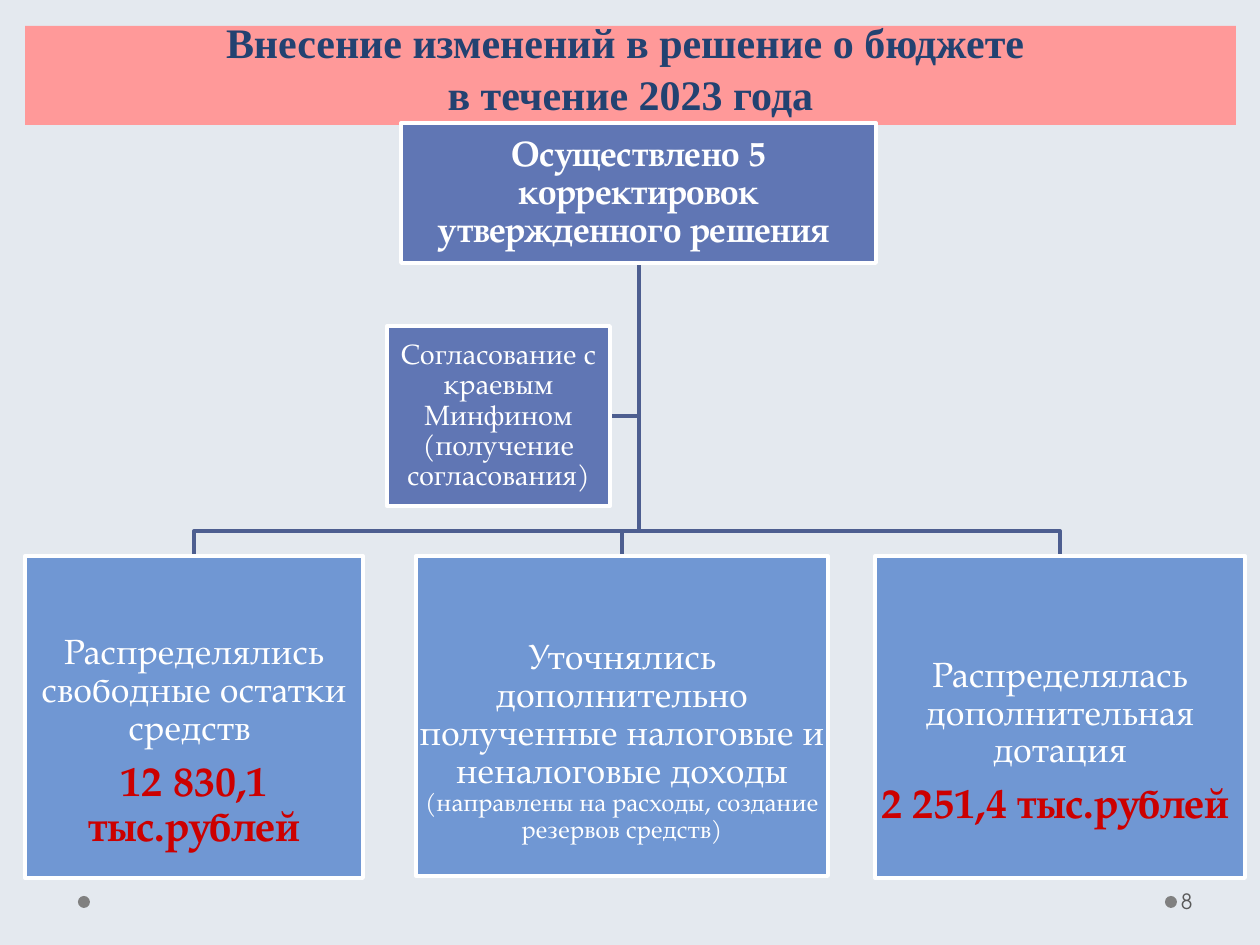
"""Build the slide on budget amendments made during 2023."""
from dataclasses import dataclass

from pptx import Presentation
from pptx import util as u
from pptx.dml.color import RGBColor
from pptx.enum import shapes, text

SCALE = 914400 / 126
COLOURS = {
    "ground": "E4E9EF", "banner": "FF9999", "title": "234271",
    "head": "6076B4", "branch": "7097D3", "link": "4D5E90",
    "white": "FFFFFF", "amount": "CC0000", "dot": "808080", "number": "595959",
}
SERIF, BODY, SANS = "Times New Roman", "TeX Gyre Pagella", "TeX Gyre Adventor"
MARGINS = ("margin_left", "margin_top", "margin_right", "margin_bottom")


@dataclass(frozen=True)
class Span:
    words: str
    size: int = 20
    bold: bool = False
    colour: str = "white"
    font: str = BODY


@dataclass(frozen=True)
class Node:
    left: int
    top: int
    width: int
    height: int
    fill: str
    paras: tuple[tuple[Span, ...], ...]
    drop: int = 1

    @property
    def centre(self) -> int:
        return self.left + self.width // 2

    @property
    def middle(self) -> int:
        return self.top + self.height // 2


ROOT = Node(401, 123, 475, 140, "head", (
    (Span("Осуществлено 5 корректировок утвержденного решения ", bold=True),),))
ASSISTANT = Node(387, 326, 223, 180, "head", (
    (Span("Согласование с краевым Минфином (получение согласования)", 16),),))
BRANCH_TOP, BUS, DROP = 556, 531, 52
BRANCHES = (
    Node(25, BRANCH_TOP, 338, 322, "branch", (
        (Span("Распределялись свободные остатки средств "),),
        (Span("12 830,1 тыс.рублей", 24, True, "amount"),)), DROP),
    Node(416, BRANCH_TOP, 412, 320, "branch", (
        (Span("Уточнялись дополнительно полученные налоговые и неналоговые доходы "),
         Span("(направлены на расходы, создание резервов средств)", 14)),), DROP),
    Node(875, BRANCH_TOP, 370, 322, "branch", (
        (Span("Распределялась дополнительная дотация"),),
        (Span("2 251,4 тыс.рублей ", 24, True, "amount"),)), DROP),
)


def px(length: int) -> u.Emu:
    """Turn pixels into EMU."""
    return u.Emu(round(length * SCALE))


def colour(name: str) -> RGBColor:
    """Look up a named colour."""
    return RGBColor.from_string(COLOURS[name])


def assign(target, values: dict) -> None:
    """Set each attribute given in a dict."""
    for name, value in values.items():
        setattr(target, name, value)


def style_run(run, span: Span) -> None:
    """Give a run the font of its span."""
    assign(run.font, {"name": span.font, "size": u.Pt(span.size), "bold": span.bold})
    run.font.color.rgb = colour(span.colour)


def style_frame(frame, anchor, margins: tuple[int, ...]) -> None:
    """Set wrapping, anchor and insets of a text frame."""
    assign(frame, {"word_wrap": True, "auto_size": text.MSO_AUTO_SIZE.NONE,
                   "vertical_anchor": anchor})
    assign(frame, dict(zip(MARGINS, map(px, margins))))


def add_title(page) -> None:
    """Place the title on its banner."""
    box = page.shapes.title
    assign(box, {"left": px(25), "top": px(26), "width": px(1211), "height": px(99)})
    box.fill.solid()
    box.fill.fore_color.rgb = colour("banner")
    style_frame(box.text_frame, text.MSO_ANCHOR.BOTTOM, (12, 6, 12, 6))
    para = box.text_frame.paragraphs[0]
    para.text = "Внесение изменений в решение о бюджете \vв течение 2023 года"
    assign(para, {"alignment": text.PP_ALIGN.CENTER, "line_spacing": 1.04})
    for run in para.runs:
        style_run(run, Span(run.text, 24, True, "title", SERIF))


def add_link(page, points: list[tuple[int, int]]) -> None:
    """Draw an elbow line through the points."""
    corners = [(px(x), px(y)) for x, y in points]
    builder = page.shapes.build_freeform(*corners[0], scale=1.0)
    link = builder.add_line_segments(corners[1:], close=False).convert_to_shape()
    link.shadow.inherit = False
    link.fill.background()
    link.line.color.rgb = colour("link")
    link.line.width = u.Pt(2.25)


def add_node(page, node: Node) -> None:
    """Draw a chart box with its text."""
    box = page.shapes.add_shape(
        shapes.MSO_SHAPE.RECTANGLE,
        *map(px, (node.left, node.top, node.width, node.height)))
    box.shadow.inherit = False
    box.fill.solid()
    box.fill.fore_color.rgb = colour(node.fill)
    box.line.color.rgb = colour("white")
    box.line.width = u.Pt(2.25)
    frame = box.text_frame
    style_frame(frame, text.MSO_ANCHOR.MIDDLE, (1, node.drop, 1, 1))
    for index, spans in enumerate(node.paras):
        para = frame.add_paragraph() if index else frame.paragraphs[0]
        assign(para, {"alignment": text.PP_ALIGN.CENTER, "line_spacing": 0.9,
                      "space_before": u.Pt(7 if index else 0)})
        for span in spans:
            run = para.add_run()
            run.text = span.words
            style_run(run, span)


def add_footer(page) -> None:
    """Draw the footer dots and the page number."""
    for left in (78, 1165):
        dot = page.shapes.add_shape(shapes.MSO_SHAPE.OVAL, *map(px, (left, 896, 12, 12)))
        dot.shadow.inherit = False
        dot.fill.solid()
        dot.fill.fore_color.rgb = colour("dot")
        dot.line.fill.background()
    box = page.shapes.add_textbox(*map(px, (1177, 876, 77, 50)))
    style_frame(box.text_frame, text.MSO_ANCHOR.MIDDLE, (4, 6, 6, 6))
    run = box.text_frame.paragraphs[0].add_run()
    run.text = "8"
    style_run(run, Span("8", 12, False, "number", SANS))


def main() -> None:
    """Build and save the deck."""
    deck = Presentation()
    assign(deck, {"slide_width": px(1260), "slide_height": px(945)})
    page = deck.slides.add_slide(deck.slide_layouts[5])
    page.background.fill.solid()
    page.background.fill.fore_color.rgb = colour("ground")
    add_footer(page)
    add_title(page)
    start = (ROOT.centre + 1, ROOT.top + ROOT.height)
    add_link(page, [start, (start[0], ASSISTANT.middle),
                    (ASSISTANT.left + ASSISTANT.width, ASSISTANT.middle)])
    for branch in BRANCHES:
        add_link(page, [start, (start[0], BUS), (branch.centre, BUS),
                        (branch.centre, branch.top)])
    for node in (ROOT, *BRANCHES, ASSISTANT):
        add_node(page, node)
    deck.save("out.pptx")


if __name__ == "__main__":
    main()
